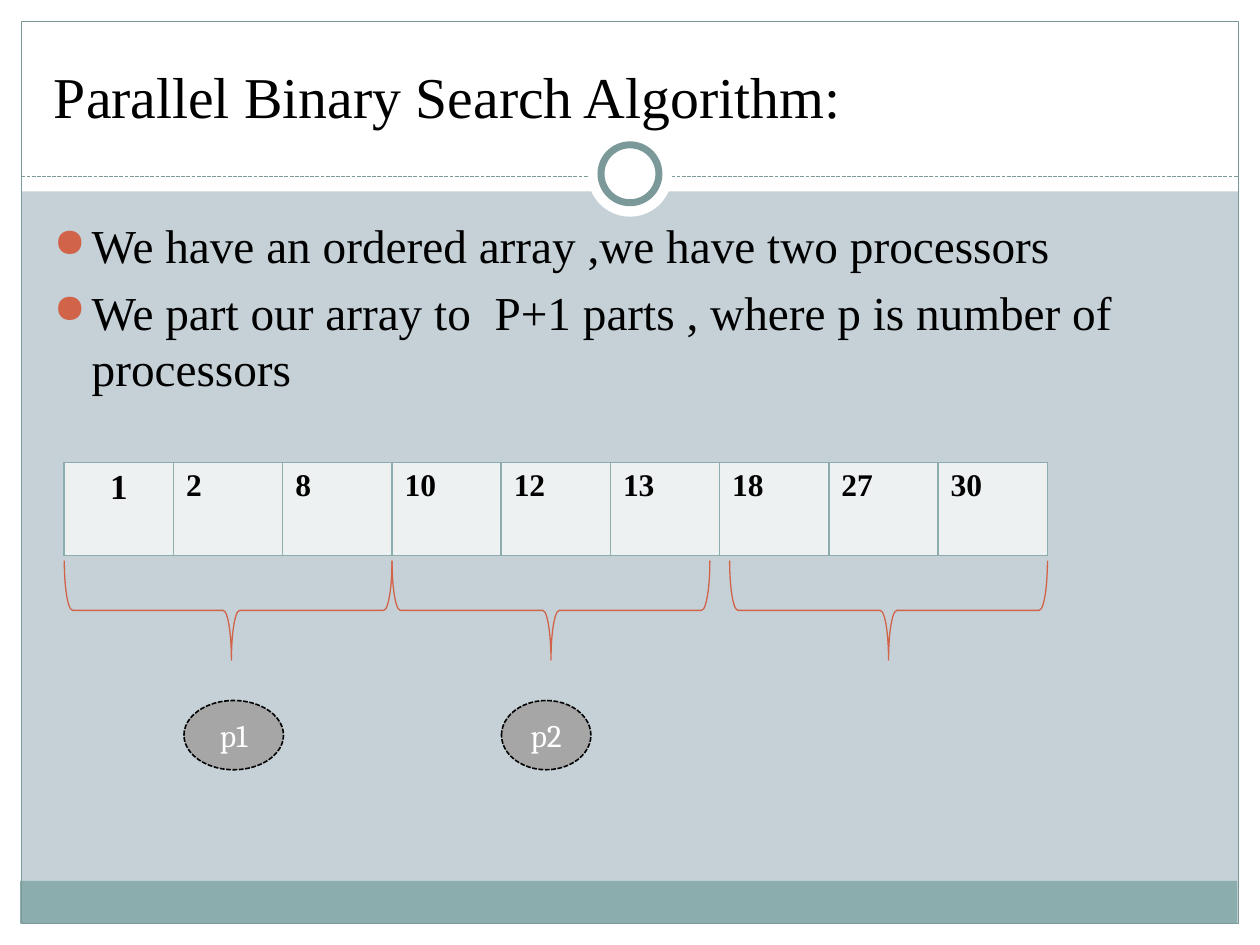
from dataclasses import dataclass
from typing import Optional

from lxml import etree
from pptx import Presentation, util as u
from pptx.dml.color import RGBColor
from pptx.enum import dml, shapes, text
from pptx.oxml import ns

WIDTH, HEIGHT = u.Inches(10), u.Inches(7.5)
COLORS = {
    "background": "C5D1D7", "white": "FFFFFF", "black": "000000", "band": "8CADAE",
    "frame": "7C999A", "cell": "EEF1F2", "accent": "D16349", "processor": "A6A6A6",
}
SERIF = "Times New Roman"
VALUES = [1, 2, 8, 10, 12, 13, 18, 27, 30]
ARRAY_LEFT, ARRAY_TOP, ARRAY_HEIGHT, COLUMN = 5.1, 48.93, 9.87, 8.67
BRACE_TOP, BRACE_HEIGHT = 59.33, 10.53


@dataclass(frozen=True)
class Box:
    left: float
    top: float
    width: float
    height: float

    def emu(self) -> tuple[int, int, int, int]:
        return (across(self.left), down(self.top), across(self.width), down(self.height))


@dataclass(frozen=True)
class Panel:
    box: Box
    fill: Optional[str] = None
    line: Optional[str] = None
    weight: float = 0.75
    kind: shapes.MSO_SHAPE = shapes.MSO_SHAPE.RECTANGLE
    dashed: bool = False


@dataclass(frozen=True)
class Part:
    first: float
    last: float
    point: float = 0.5


@dataclass(frozen=True)
class Processor:
    name: str
    left: float
    width: float


PANELS = [
    Panel(Box(0, 97.73, 100, 2.27), "white"),
    Panel(Box(0, 0, 100, 20.27), "white"),
    Panel(Box(0, 0, 1.7, 100), "white"),
    Panel(Box(98.3, 0, 1.7, 100), "white"),
    Panel(Box(1.6, 93.2, 96.6, 4.53), "band"),
    Panel(Box(1.7, 2.27, 96.6, 95.46), None, "frame"),
]
RINGS = [
    Panel(Box(46.65, 14, 6.7, 8.93), "white", kind=shapes.MSO_SHAPE.OVAL),
    Panel(Box(47.7, 15.33, 4.6, 6.13), "white", "frame", 4, shapes.MSO_SHAPE.OVAL),
]
PARTS = [Part(0, 3, 0.49), Part(3, 5.91), Part(6.09, 9)]
PROCESSORS = [Processor("p1", 14.6, 7.9), Processor("p2", 39.8, 7.1)]
BULLETS = [
    "We have an ordered array ,we have two processors",
    "We part our array to  P+1 parts , where p is number of processors",
]


def across(percent: float) -> int:
    return round(WIDTH * percent / 100)


def down(percent: float) -> int:
    return round(HEIGHT * percent / 100)


def color(name: str) -> RGBColor:
    return RGBColor.from_string(COLORS[name])


def add_element(parent, tag: str, **attributes: str):
    return etree.SubElement(parent, ns.qn(tag), attributes)


def set_font(paragraph, size: float, name: str = SERIF, tint: str = "black", bold: bool = False) -> None:
    font = paragraph.font
    font.size, font.name, font.bold = u.Pt(size), name, bold
    font.color.rgb = color(tint)


def set_line(line, tint: str, weight: float, dashed: bool = False) -> None:
    line.color.rgb = color(tint)
    line.width = u.Pt(weight)
    if dashed:
        line.dash_style = dml.MSO_LINE.SQUARE_DOT


def draw_panel(slide, panel: Panel):
    shape = slide.shapes.add_shape(panel.kind, *panel.box.emu())
    shape.shadow.inherit = False
    if panel.fill:
        shape.fill.solid()
        shape.fill.fore_color.rgb = color(panel.fill)
    else:
        shape.fill.background()
    if panel.line:
        set_line(shape.line, panel.line, panel.weight, panel.dashed)
    else:
        shape.line.fill.background()
    return shape


def draw_divider(slide) -> None:
    connector = slide.shapes.add_connector(
        shapes.MSO_CONNECTOR.STRAIGHT, across(1.7), down(18.67), across(98.3), down(18.67))
    set_line(connector.line, "frame", 0.75, True)
    add_element(connector._element.spPr, "a:effectLst")


def add_text(slide, box: Box, anchor: text.MSO_ANCHOR):
    frame = slide.shapes.add_textbox(*box.emu()).text_frame
    frame.word_wrap = True
    frame.vertical_anchor = anchor
    return frame


def draw_title(slide) -> None:
    frame = add_text(slide, Box(3.3, 3.33, 93.3, 11.07), text.MSO_ANCHOR.BOTTOM)
    frame.text = "Parallel Binary Search Algorithm:"
    set_font(frame.paragraphs[0], 33)


def draw_bullets(slide) -> None:
    frame = add_text(slide, Box(3.3, 22.27, 93, 66.67), text.MSO_ANCHOR.TOP)
    frame.text = "\n".join(BULLETS)
    indent = across(3)
    for paragraph in frame.paragraphs:
        set_font(paragraph, 27)
        paragraph.space_before = u.Pt(5.4)
        properties = paragraph._p.get_or_add_pPr()
        properties.set("marL", str(indent))
        properties.set("indent", str(-indent))
        bullet_color = etree.Element(ns.qn("a:buClr"))
        add_element(bullet_color, "a:srgbClr", val=COLORS["accent"])
        bullet_size = etree.Element(ns.qn("a:buSzPct"), val="85000")
        bullet = etree.Element(ns.qn("a:buChar"), char="●")
        position = properties.index(properties.find(ns.qn("a:defRPr")))
        properties[position:position] = [bullet_color, bullet_size, bullet]


def draw_borders(cell) -> None:
    properties = cell._tc.get_or_add_tcPr()
    for position, side in enumerate(("a:lnL", "a:lnR", "a:lnT", "a:lnB")):
        border = etree.Element(ns.qn(side), w=str(u.Pt(1)))
        fill = add_element(border, "a:solidFill")
        add_element(fill, "a:srgbClr", val=COLORS["band"])
        properties.insert(position, border)


def draw_array(slide) -> None:
    box = Box(ARRAY_LEFT, ARRAY_TOP, COLUMN * len(VALUES), ARRAY_HEIGHT)
    table = slide.shapes.add_table(1, len(VALUES), *box.emu()).table
    for index, value in enumerate(VALUES):
        table.columns[index].width = across(COLUMN)
        cell = table.cell(0, index)
        cell.text = str(value)
        cell.fill.solid()
        cell.fill.fore_color.rgb = color("cell")
        draw_borders(cell)
        paragraph = cell.text_frame.paragraphs[0]
        set_font(paragraph, 18 if index else 20, bold=True)
        if index == 0:
            paragraph.alignment = text.PP_ALIGN.CENTER


def draw_brace(slide, part: Part) -> None:
    span = across((part.last - part.first) * COLUMN)
    depth = down(BRACE_HEIGHT)
    center = across(ARRAY_LEFT + (part.first + part.last) / 2 * COLUMN)
    middle = down(BRACE_TOP + BRACE_HEIGHT / 2)
    shape = slide.shapes.add_shape(
        shapes.MSO_SHAPE.RIGHT_BRACE, center - depth // 2, middle - span // 2, depth, span)
    shape.rotation = 90
    shape.adjustments[1] = part.point
    shape.shadow.inherit = False
    shape.fill.background()
    set_line(shape.line, "accent", 0.75)


def draw_processor(slide, processor: Processor) -> None:
    box = Box(processor.left, 74.13, processor.width, 7.33)
    shape = draw_panel(slide, Panel(box, "processor", "black", 0.9, shapes.MSO_SHAPE.OVAL, True))
    frame = shape.text_frame
    frame.text = processor.name
    frame.vertical_anchor = text.MSO_ANCHOR.MIDDLE
    paragraph = frame.paragraphs[0]
    paragraph.alignment = text.PP_ALIGN.CENTER
    set_font(paragraph, 18, "Cambria", "white")


def main() -> None:
    presentation = Presentation()
    presentation.slide_width, presentation.slide_height = WIDTH, HEIGHT
    slide = presentation.slides.add_slide(presentation.slide_layouts[6])
    slide.background.fill.solid()
    slide.background.fill.fore_color.rgb = color("background")
    for panel in PANELS:
        draw_panel(slide, panel)
    draw_divider(slide)
    for ring in RINGS:
        draw_panel(slide, ring)
    draw_title(slide)
    draw_bullets(slide)
    draw_array(slide)
    for part in PARTS:
        draw_brace(slide, part)
    for processor in PROCESSORS:
        draw_processor(slide, processor)
    presentation.save("out.pptx")


if __name__ == "__main__":
    main()
